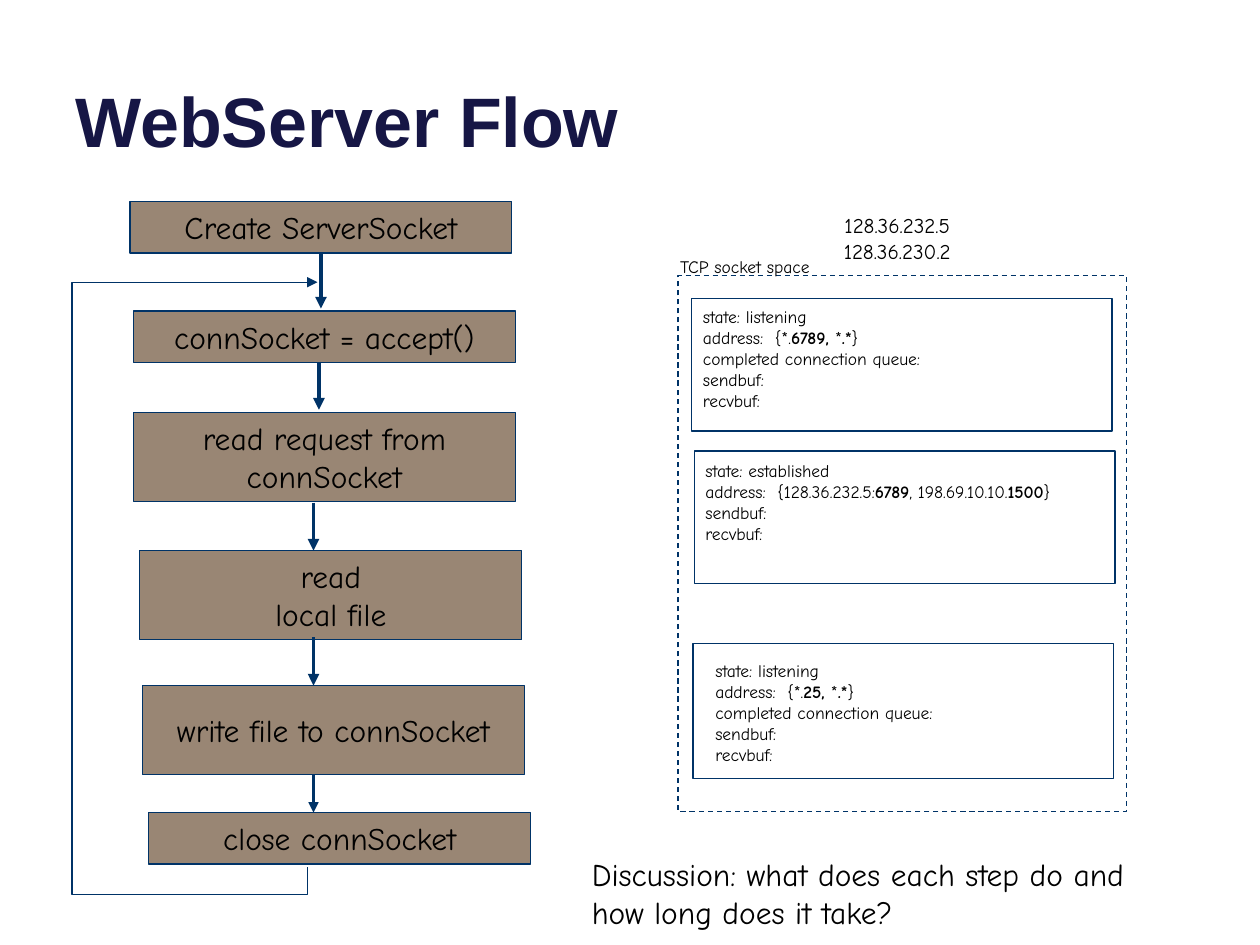
from lxml.etree import SubElement as Sub
from pptx import Presentation
from pptx.dml.color import RGBColor
from pptx.enum.dml import MSO_LINE as Dash
from pptx.enum.shapes import MSO_CONNECTOR as Link, MSO_SHAPE as Form
from pptx.enum.text import MSO_ANCHOR as Anchor, MSO_AUTO_SIZE as Fit, PP_ALIGN as Align
from pptx.oxml.ns import qn
from pptx.util import Cm, Pt

NAVY, TAN, BLACK, INK = "003367", "998674", "000000", "161645"


def color(text):
    return RGBColor.from_string(text)


def write(shape, lines, size, align=Align.LEFT, **frame):
    """Fill a text frame; parts between bars alternate plain and bold."""
    text = shape.text_frame
    for name, value in frame.items():
        setattr(text, name, value)
    for i, line in enumerate(lines):
        par = text.add_paragraph() if i else text.paragraphs[0]
        par.alignment = align
        for j, part in enumerate(line.split("|")):
            run = par.add_run()
            run.text = part
            look = {"name": "Comic Neue", "size": Pt(size), "bold": j % 2 == 1}
            for name, value in look.items():
                setattr(run.font, name, value)
            run.font.color.rgb = color(BLACK)


deck = Presentation()
deck.slide_width, deck.slide_height = Cm(25.4), Cm(19.05)
slide = deck.slides.add_slide(deck.slide_layouts[5])
shapes = slide.shapes

# Title
title = shapes.title
place = {"left": 1.27, "top": -0.94, "width": 22.86, "height": 4.32}
for name, value in place.items():
    setattr(title, name, Cm(value))
title.text_frame.text = "WebServer Flow"
title.text_frame.vertical_anchor = Anchor.BOTTOM
head = title.text_frame.paragraphs[0]
head.alignment = Align.LEFT
for name, value in {"name": "Arial", "size": Pt(40), "bold": True}.items():
    setattr(head.font, name, value)
head.font.color.rgb = color(INK)

# Socket space: dashed frame and three sockets
frames = [
    (13.67, 5.56, 9.04, 10.8),
    (13.94, 6.02, 8.48, 2.67),
    (14, 9.09, 8.48, 2.67),
    (13.97, 12.98, 8.48, 2.72),
]
for i, spot in enumerate(frames):
    box = shapes.add_shape(Form.RECTANGLE, *map(Cm, spot))
    box.shadow.inherit = False
    box.fill.background()
    box.line.color.rgb = color(NAVY)
    box.line.width = Pt(0.75)
    if i == 0:
        box.line.dash_style = Dash.DASH

# Socket labels
bufs = ["sendbuf:", "recvbuf:"]
queue = ["completed connection queue:"] + bufs
labels = [
    ((13.34, 5.03, 3.35, 0.69), 10, Align.CENTER, ["TCP socket space"]),
    ((16.54, 4.17, 3.1, 1.27), 12, Align.CENTER, ["128.36.232.5", "128.36.230.2"]),
    ((13.92, 6.05, 5.31, 2.36), 10, Align.LEFT,
     ["state: listening", "address:  {*.|6789, |*|.*|}"] + queue),
    ((13.97, 9.14, 8.69, 1.96), 10, Align.LEFT,
     ["state: established",
      "address:  {128.36.232.5:|6789|, 198.69.10.10.|1500|}"] + bufs),
    ((14.17, 13.18, 5.21, 2.36), 10, Align.LEFT,
     ["state: listening", "address:  {*.|25, |*|.*|}"] + queue),
]
for spot, size, align, lines in labels:
    label = shapes.add_textbox(*map(Cm, spot))
    write(label, lines, size, align, word_wrap=False, auto_size=Fit.SHAPE_TO_FIT_TEXT)

# Flow steps: left, top, height, lines
steps = [
    (2.62, 4.06, 1.04, ["Create ServerSocket"]),
    (2.69, 6.27, 1.04, ["connSocket = accept()"]),
    (2.69, 8.31, 1.8, ["read request from connSocket"]),
    (2.82, 11.1, 1.8, ["read", "local file"]),
    (2.87, 13.82, 1.8, ["write file to connSocket"]),
    (3, 16.38, 1.04, ["close connSocket"]),
]
boxes = []
for left, top, high, lines in steps:
    box = shapes.add_shape(Form.RECTANGLE, Cm(left), Cm(top), Cm(7.7), Cm(high))
    box.shadow.inherit = False
    box.fill.solid()
    box.fill.fore_color.rgb = color(TAN)
    box.line.color.rgb = color(NAVY)
    box.line.width = Pt(0.75)
    write(box, lines, 18, Align.CENTER, word_wrap=True, vertical_anchor=Anchor.MIDDLE)
    boxes.append(box)

# Arrows between steps: x, start, end, weight
arrows = []
for x, start, end, weight in [
    (6.47, 5.1, 6.22, 2.25),
    (6.43, 7.29, 8.26, 2.25),
    (6.32, 10.13, 11.1, 2.25),
    (6.32, 12.85, 13.82, 2.25),
    (6.32, 15.62, 16.38, 1.5),
]:
    arrow = shapes.add_connector(Link.STRAIGHT, Cm(x), Cm(start), Cm(x), Cm(end))
    arrow.line.width = Pt(weight)
    arrows.append(arrow)
arrows[0].begin_connect(boxes[0], 2)

# Loop back to accept
turns = [(6.2, 18.03), (1.45, 18.03), (1.45, 5.69), (6.4, 5.69)]
pen = shapes.build_freeform(Cm(6.2), Cm(17.48))
pen.add_line_segments([(Cm(x), Cm(y)) for x, y in turns], close=False)
loop = pen.convert_to_shape()
loop.fill.background()
loop.line.width = Pt(0.75)

# Colour and arrowhead for every flow line
for flow in arrows + [loop]:
    flow.line.color.rgb = color(NAVY)
    Sub(flow.line._get_or_add_ln(), qn("a:tailEnd"), type="triangle")
    Sub(flow._element.spPr, qn("a:effectLst"))

# Discussion question
note = shapes.add_textbox(Cm(11.68), Cm(17.12), Cm(12.45), Cm(1.8))
write(note, ["Discussion: what does each step do and how long does it take?"], 18,
      word_wrap=True)

deck.save("out.pptx")
